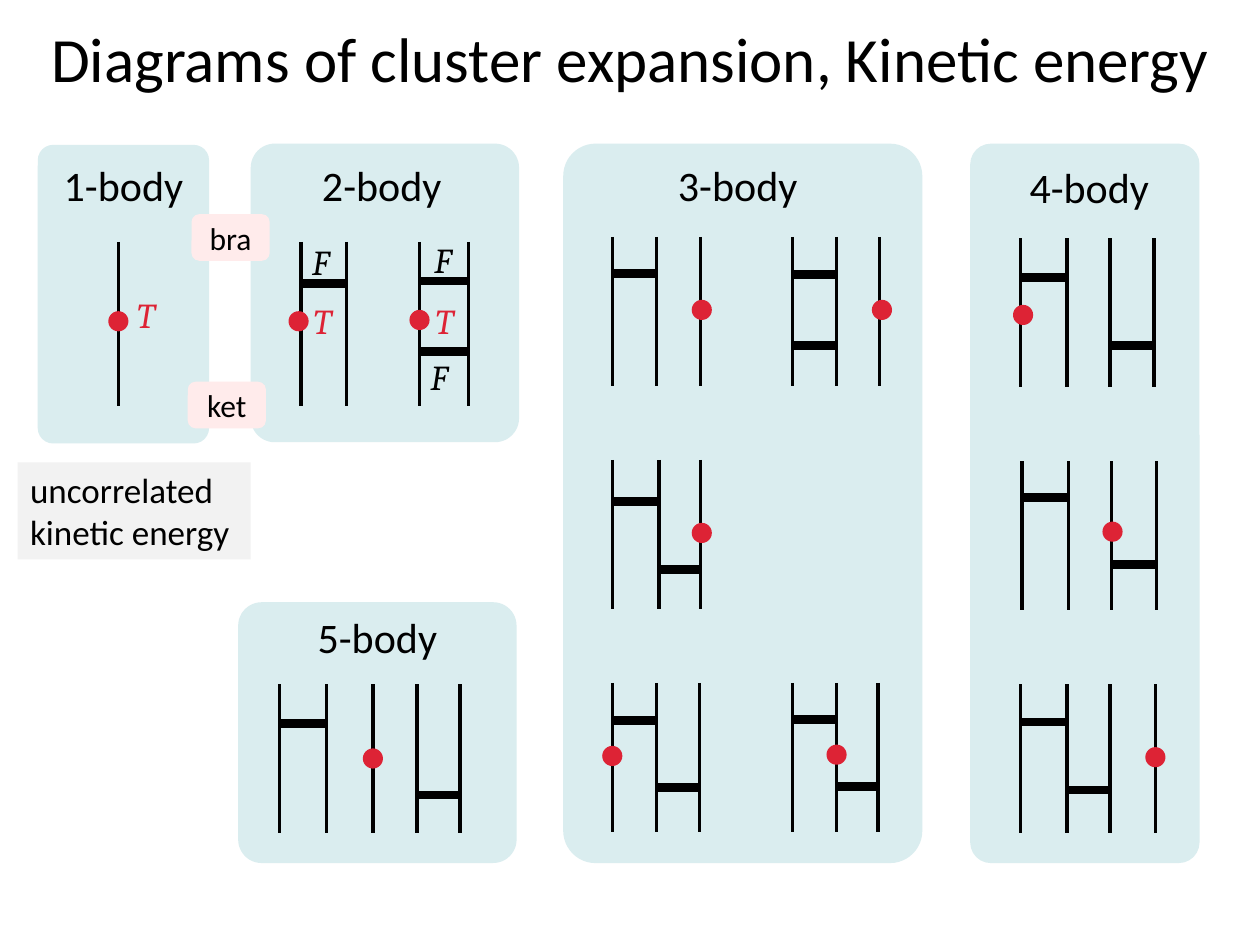
from lxml import etree
from pptx import Presentation
from pptx.dml.color import RGBColor
from pptx.enum.shapes import MSO_CONNECTOR as Connector, MSO_SHAPE as Shape
from pptx.enum.text import MSO_ANCHOR as Anchor, MSO_AUTO_SIZE as AutoSize, PP_ALIGN as Align
from pptx.oxml.ns import qn
from pptx.util import Inches, Pt

COLORS = {
    "panel": "DAEDEF",
    "tag": "FFEBEB",
    "note": "F2F2F2",
    "kinetic": "DD2335",
    "ink": "000000",
}

deck = Presentation()
deck.slide_width = Inches(10)
deck.slide_height = Inches(7.5)
slide = deck.slides.add_slide(deck.slide_layouts[6])
shapes = slide.shapes


def add_filled(kind, box, color):
    filled = shapes.add_shape(kind, *map(Inches, box))
    filled.shadow.inherit = False
    filled.fill.solid()
    filled.fill.fore_color.rgb = RGBColor.from_string(COLORS[color])
    filled.line.fill.background()
    return filled


def write(frame, lines, size, align=Align.CENTER, anchor=Anchor.MIDDLE,
          font="Calibri", color="ink", italic=False, wrap=True):
    frame.word_wrap = wrap
    frame.vertical_anchor = anchor
    for number, line in enumerate(lines):
        paragraph = frame.add_paragraph() if number else frame.paragraphs[0]
        paragraph.alignment = align
        run = paragraph.add_run()
        run.text = line
        run.font.size = Pt(size)
        run.font.name = font
        run.font.italic = italic
        run.font.color.rgb = RGBColor.from_string(COLORS[color])


title = shapes.add_textbox(Inches(0), Inches(0.13), Inches(10), Inches(0.65))
write(title.text_frame, ["Diagrams of cluster expansion, Kinetic energy"], 36)

panels = [
    ("1-body", (0.3, 1.15, 1.36, 2.37), (0.33, 1.25, 1.3, 0.44)),
    ("2-body", (1.99, 1.14, 2.13, 2.37), (2.38, 1.25, 1.3, 0.44)),
    ("3-body", (4.47, 1.14, 2.85, 5.71), (5.18, 1.25, 1.35, 0.44)),
    ("4-body", (7.7, 1.14, 1.82, 5.71), (7.97, 1.26, 1.35, 0.44)),
    ("5-body", (1.89, 4.78, 2.21, 2.07), (2.32, 4.83, 1.35, 0.44)),
]
for name, panel_box, heading_box in panels:
    panel = add_filled(Shape.ROUNDED_RECTANGLE, panel_box, "panel")
    panel.adjustments[0] = 0.09
    heading = add_filled(Shape.ROUNDED_RECTANGLE, heading_box, "panel")
    write(heading.text_frame, [name], 24)

TALL, SHORT = 1.3, 1.18
DOT = 0.16

# top, height, particle lines, correlations (from, to, y), kinetic dot centre
diagrams = [
    (1.92, TALL, [0.94], [], (0.94, 2.55)),
    (1.92, TALL, [2.39, 2.75], [(0, 1, 2.25)], (2.37, 2.55)),
    (1.92, TALL, [3.33, 3.72], [(0, 1, 2.23), (0, 1, 2.79)], (3.33, 2.54)),
    (1.88, SHORT, [4.86, 5.21, 5.56], [(0, 1, 2.17)], (5.57, 2.46)),
    (1.88, SHORT, [6.29, 6.64, 6.98], [(0, 1, 2.18), (0, 1, 2.74)], (7, 2.46)),
    (3.65, SHORT, [4.86, 5.23, 5.56], [(0, 1, 3.98), (1, 2, 4.52)], (5.57, 4.23)),
    (5.42, SHORT, [4.86, 5.21, 5.55], [(0, 1, 5.72), (1, 2, 6.25)], (4.86, 6)),
    (5.42, SHORT, [6.29, 6.64, 6.97], [(0, 1, 5.71), (1, 2, 6.24)], (6.64, 5.99)),
    (1.89, SHORT, [8.1, 8.47, 8.81, 9.16], [(0, 1, 2.2), (2, 3, 2.74)], (8.12, 2.5)),
    (3.66, SHORT, [8.11, 8.48, 8.82, 9.18], [(0, 1, 3.95), (2, 3, 4.48)], (8.83, 4.22)),
    (5.43, SHORT, [8.1, 8.47, 8.81, 9.17], [(0, 1, 5.73), (1, 2, 6.27)], (9.17, 6.01)),
    (5.43, SHORT, [2.22, 2.59, 2.96, 3.31, 3.65], [(0, 1, 5.74), (3, 4, 6.31)], (2.96, 6.02)),
]
for top, height, particles, correlations, (dot_x, dot_y) in diagrams:
    strokes = [(x, top, x, top + height, 2) for x in particles]
    strokes += [(particles[a], y, particles[b], y, 5) for a, b, y in correlations]
    for *ends, width in strokes:
        stroke = shapes.add_connector(Connector.STRAIGHT, *map(Inches, ends))
        stroke.line.width = Pt(width)
        stroke.line.color.rgb = RGBColor.from_string(COLORS["ink"])
        etree.SubElement(stroke._element.spPr, qn("a:effectLst"))
    add_filled(Shape.OVAL, (dot_x - DOT / 2, dot_y - DOT / 2, DOT, DOT), "kinetic")

operators = [
    ("T", 0.99, 2.28), ("F", 2.38, 1.86), ("T", 2.39, 2.33),
    ("F", 3.35, 1.84), ("T", 3.36, 2.33), ("F", 3.32, 2.77),
]
for symbol, left, top in operators:
    operator = shapes.add_textbox(Inches(left), Inches(top), Inches(0.36), Inches(0.44))
    write(operator.text_frame, [symbol], 20, Align.LEFT, Anchor.TOP, "Cambria",
          "kinetic" if symbol == "T" else "ink", italic=True, wrap=False)
    operator.text_frame.auto_size = AutoSize.SHAPE_TO_FIT_TEXT

for state, left, top in [("bra", 1.52, 1.7), ("ket", 1.49, 3.03)]:
    tag = add_filled(Shape.ROUNDED_RECTANGLE, (left, top, 0.62, 0.37), "tag")
    write(tag.text_frame, [state], 18)

note = add_filled(Shape.RECTANGLE, (0.14, 3.67, 1.85, 0.77), "note")
write(note.text_frame, ["uncorrelated", "kinetic energy"], 20, Align.LEFT, Anchor.TOP)
note.text_frame.auto_size = AutoSize.SHAPE_TO_FIT_TEXT

deck.save("out.pptx")
